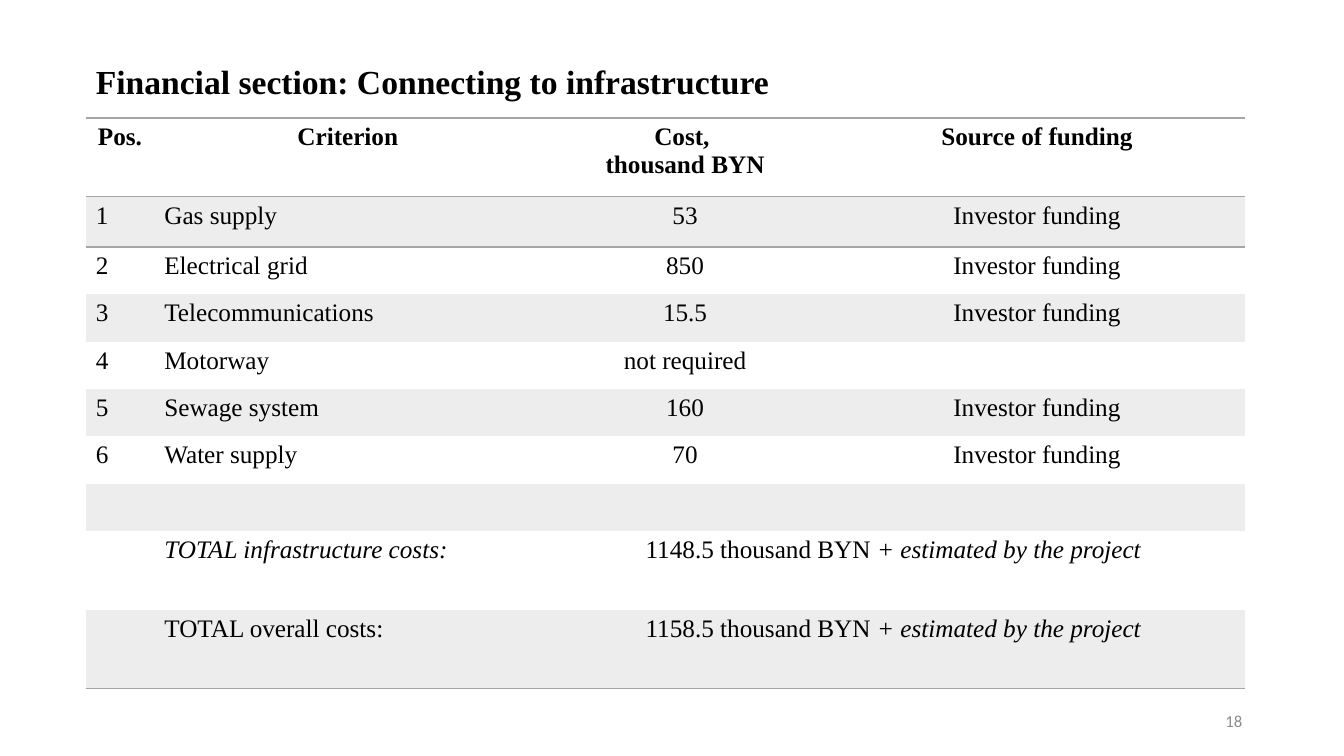
from lxml.etree import SubElement
from pptx import Presentation
from pptx.dml.color import RGBColor
from pptx.enum.text import MSO_ANCHOR, PP_ALIGN
from pptx.oxml.ns import qn
from pptx.util import Inches, Pt

SERIF = "Times New Roman"
BLACK, RULE, BAND, GREY = "000000", "A5A5A5", "EDEDED", "8C8C8C"
NO_STYLE = "{2D5ABB26-0587-4C30-8999-92F81FD0307C}"

COLUMN_WIDTHS = [0.68, 3.84, 2.85, 4.13]
ROW_HEIGHTS = [0.78, 0.5] + [0.47] * 6 + [0.78] * 2
INVESTOR = "Investor funding"
ESTIMATE = "+ estimated by the project"
ROWS = [
    ["Pos.", "Criterion", "Cost, \nthousand BYN", "Source of funding"],
    ["1", "Gas supply", "53", INVESTOR],
    ["2", "Electrical grid", "850", INVESTOR],
    ["3", "Telecommunications", "15.5", INVESTOR],
    ["4", "Motorway", "not required", ""],
    ["5", "Sewage system", "160", INVESTOR],
    ["6", "Water supply", "70", INVESTOR],
    ["", "", "", ""],
    ["", "TOTAL infrastructure costs:", "1148.5 thousand BYN ", ""],
    ["", "TOTAL overall costs:", "1158.5 thousand BYN ", ""],
]
INFRASTRUCTURE_TOTAL, OVERALL_TOTAL = 8, 9


def rgb(color):
    return RGBColor.from_string(color)


def style(p, size, name=SERIF, color=BLACK, bold=False, align=PP_ALIGN.LEFT):
    p.alignment = align
    font = p.font
    font.size, font.name, font.bold = Pt(size), name, bold
    font.color.rgb = rgb(color)


def add_title(s, text):
    title = s.shapes.title
    title.left, title.top = Inches(0.85), Inches(0.41)
    title.width, title.height = Inches(11.5), Inches(0.84)
    tf = title.text_frame
    tf.text = text
    tf.vertical_anchor = MSO_ANCHOR.MIDDLE
    p = tf.paragraphs[0]
    p.line_spacing = 0.9
    style(p, 24, bold=True)


def add_border(cell, side):
    """Rule one side of a cell ("T" or "B"); call before setting its fill."""
    ln = SubElement(cell._tc.get_or_add_tcPr(), qn(f"a:ln{side}"), w=str(Pt(1)))
    fill = SubElement(ln, qn("a:solidFill"))
    SubElement(fill, qn("a:srgbClr"), val=RULE)


def fill_cell(cell, text, row, col):
    if row in (0, 1):
        add_border(cell, "T")
    if row in (0, len(ROWS) - 1):
        add_border(cell, "B")
    if row % 2:
        cell.fill.solid()
        cell.fill.fore_color.rgb = rgb(BAND)
    else:
        cell.fill.background()
    cell.text = text
    centred = row == 0 or col >= 2
    for p in cell.text_frame.paragraphs:
        style(p, 18, bold=row == 0,
              align=PP_ALIGN.CENTER if centred else PP_ALIGN.LEFT)


def add_cost_table(s):
    frame = s.shapes.add_table(len(ROWS), len(COLUMN_WIDTHS), Inches(0.85),
                               Inches(1.17), Inches(11.5), Inches(5.65))
    table = frame.table
    table._tbl.tblPr.find(qn("a:tableStyleId")).text = NO_STYLE
    for column, width in zip(table.columns, COLUMN_WIDTHS):
        column.width = Inches(width)
    for row, height in zip(table.rows, ROW_HEIGHTS):
        row.height = Inches(height)
    for i, texts in enumerate(ROWS):
        for j, text in enumerate(texts):
            fill_cell(table.cell(i, j), text, i, j)
    for i in (INFRASTRUCTURE_TOTAL, OVERALL_TOTAL):
        total = table.cell(i, 2)
        total.merge(table.cell(i, 3))
        r = total.text_frame.paragraphs[0].add_run()
        r.text = ESTIMATE
        r.font.italic = True
    label = table.cell(INFRASTRUCTURE_TOTAL, 1)
    label.text_frame.paragraphs[0].font.italic = True


def add_page_number(s, number):
    box = s.shapes.add_textbox(Inches(9.42), Inches(6.95), Inches(3), Inches(0.4))
    tf = box.text_frame
    tf.word_wrap = True
    tf.vertical_anchor = MSO_ANCHOR.MIDDLE
    tf.text = number
    style(tf.paragraphs[0], 12, "Calibri", GREY, align=PP_ALIGN.RIGHT)


def main():
    prs = Presentation()
    prs.slide_width, prs.slide_height = Inches(13.33), Inches(7.5)
    s = prs.slides.add_slide(prs.slide_layouts[5])
    add_title(s, "Financial section: Connecting to infrastructure")
    add_cost_table(s)
    add_page_number(s, "18")
    prs.save("out.pptx")


if __name__ == "__main__":
    main()
